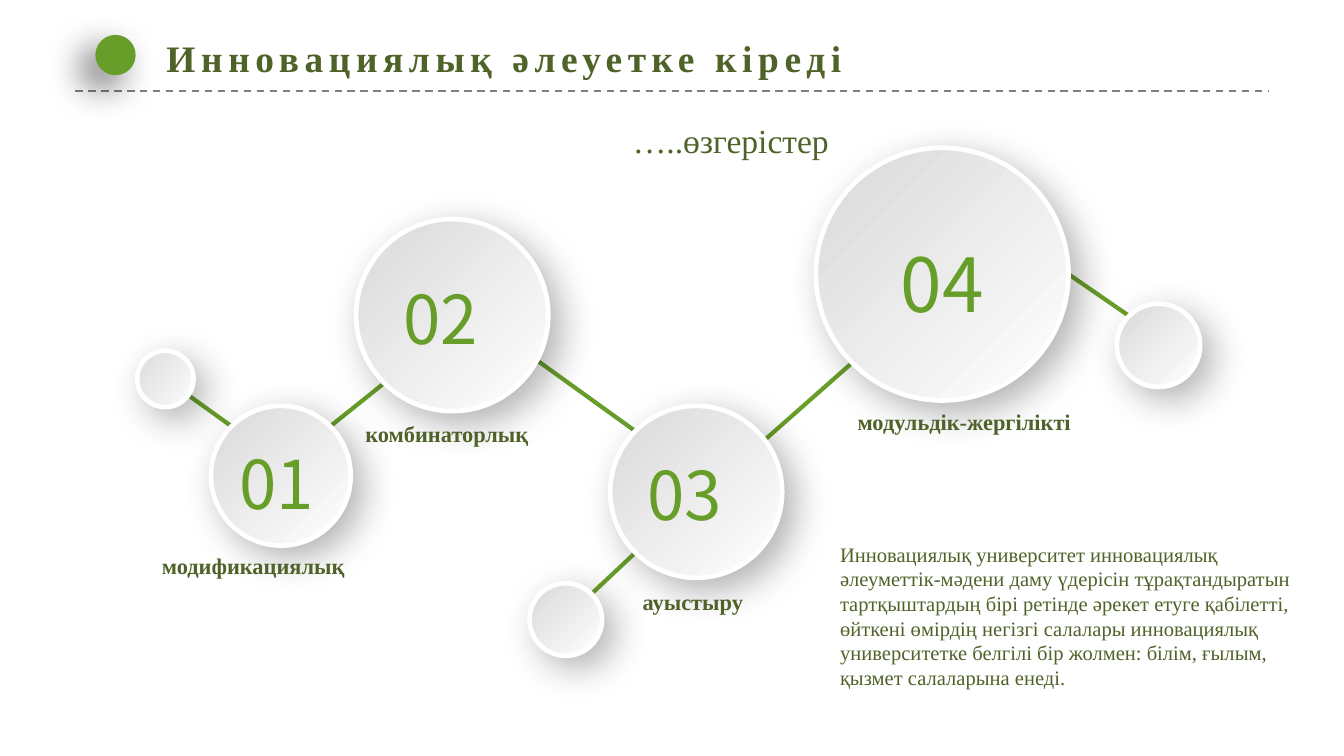
from lxml import etree
from pptx import Presentation
from pptx import util as u
from pptx.dml.color import RGBColor
from pptx.enum import dml, shapes, text
from pptx.oxml import parse_xml
from pptx.oxml.ns import qn

GREEN = RGBColor(0x67, 0x9E, 0x2A)
OLIVE = RGBColor(0x4F, 0x62, 0x28)
GRAY = RGBColor(0x80, 0x80, 0x80)
SILVER = RGBColor(0xD9, 0xD9, 0xD9)
WHITE = RGBColor(0xFF, 0xFF, 0xFF)
SERIF, SANS = "Times New Roman", "Noto Sans CJK SC"
A = "http://schemas.openxmlformats.org/drawingml/2006/main"

# Widescreen 16:9 slide
prs = Presentation()
prs.slide_width = u.Inches(10)
prs.slide_height = u.Inches(10 * 9 / 16)
s = prs.slides.add_slide(prs.slide_layouts[6])


def add_text(words, x, y, w, h, size, color=OLIVE, font=SERIF, bold=False, inset=0.1, wrap=True):
    tf = s.shapes.add_textbox(*map(u.Inches, (x, y, w, h))).text_frame
    tf.word_wrap = wrap
    tf.margin_left = tf.margin_right = u.Inches(inset)
    tf.margin_top = tf.margin_bottom = u.Inches(0.05 if inset == 0.1 else 0.04)
    p = tf.paragraphs[0]
    p.text = words
    f = p.runs[0].font
    f.size, f.name, f.bold, f.color.rgb = u.Pt(size), font, bold, color
    return p


def add_circle(x, y, d, alpha, dist, angle):
    sp = s.shapes.add_shape(shapes.MSO_SHAPE.OVAL, *map(u.Inches, (x, y, d, d)))
    sp.fill.solid()
    sp.fill.fore_color.rgb = GREEN
    sp.line.fill.background()
    # Soft outer shadow
    sp._element.spPr.append(parse_xml(
        f'<a:effectLst xmlns:a="{A}"><a:outerShdw blurRad="{u.Pt(20)}" dist="{u.Pt(dist)}" '
        f'dir="{angle * 60000}" algn="ctr" rotWithShape="0"><a:srgbClr val="000000">'
        f'<a:alpha val="{alpha * 1000}"/></a:srgbClr></a:outerShdw></a:effectLst>'))
    return sp


# Header rule and links between circles
links = [
    (0.56, 0.68, 9.44, 0.68),
    (2.46, 3.17, 2.86, 2.85),
    (3.98, 2.67, 4.73, 3.21),
    (5.66, 3.3, 6.34, 2.7),
    (1.4, 2.94, 1.72, 3.17),
    (4.4, 4.42, 4.73, 4.11),
    (7.95, 2.04, 8.4, 2.35),
]
for i, ends in enumerate(links):
    c = s.shapes.add_connector(shapes.MSO_CONNECTOR.STRAIGHT, *map(u.Inches, ends))
    c.line.color.rgb = GREEN if i else GRAY
    c.line.width = u.Pt(2.25 if i else 1)
    if i == 0:
        c.line.dash_style = dml.MSO_LINE.DASH
    etree.SubElement(c._element.spPr, qn("a:effectLst"))

# Header
add_circle(0.71, 0.26, 0.3, 60, 10, 135)
p = add_text("Инновациялық әлеуетке кіреді", 1.14, 0.21, 5.42, 0.44, 20, bold=True, wrap=False)
p.runs[0].font._element.set("spc", "300")

# Circles: left, top, diameter, rotation
circles = [
    (1.57, 3.02, 1.04, 0),
    (1.02, 2.61, 0.42, 350.3),
    (3.94, 4.34, 0.54, 0),
    (8.31, 2.26, 0.62, 0),
    (2.65, 1.63, 1.43, 0),
    (6.07, 1.1, 1.88, 0),
    (4.54, 3.02, 1.28, 0),
]
for x, y, d, rotation in circles:
    sp = add_circle(x, y, d, 30, 8, 45)
    sp.rotation = rotation
    sp.fill.gradient()
    sp.fill.gradient_angle = 315
    for stop, color in zip(sp.fill.gradient_stops, (SILVER, WHITE)):
        stop.color.rgb = color
    sp.line.color.rgb = WHITE
    sp.line.width = u.Pt(2.5)

# Numbers
numbers = [
    ("01", 1.71, 3.25, 0.77, 0.57, 36),
    ("02", 2.93, 2.02, 0.86, 0.65, 36),
    ("03", 4.75, 3.33, 0.86, 0.65, 36),
    ("04", 6.5, 1.73, 1.02, 0.63, 40),
]
for number in numbers:
    p = add_text(*number, color=GREEN, font=SANS, inset=0.07)
p.alignment = text.PP_ALIGN.CENTER

# Labels
labels = [
    ("модификациялық", 0.98, 4.07, 1.81),
    ("комбинаторлық", 2.58, 3.09, 1.49),
    ("ауыстыру", 4.41, 4.34, 1.49),
    ("модульдік-жергілікті", 6.28, 3, 1.79),
]
for label in labels:
    p = add_text(*label, 0.29, 12, bold=True, inset=0.09)
    p.alignment = text.PP_ALIGN.CENTER
    p.line_spacing = u.Pt(14.1)

# Subtitle and closing paragraph
add_text("…..өзгерістер", 4.61, 0.84, 1.68, 0.4, 18, wrap=False)
add_text(
    "Инновациялық университет инновациялық әлеуметтік-мәдени даму үдерісін "
    "тұрақтандыратын тартқыштардың бірі ретінде әрекет етуге қабілетті, өйткені "
    "өмірдің негізгі салалары инновациялық университетке белгілі бір жолмен: "
    "білім, ғылым, қызмет салаларына енеді.",
    6.18, 3.99, 3.65, 1.19, 11, inset=0.07)

prs.save("out.pptx")
